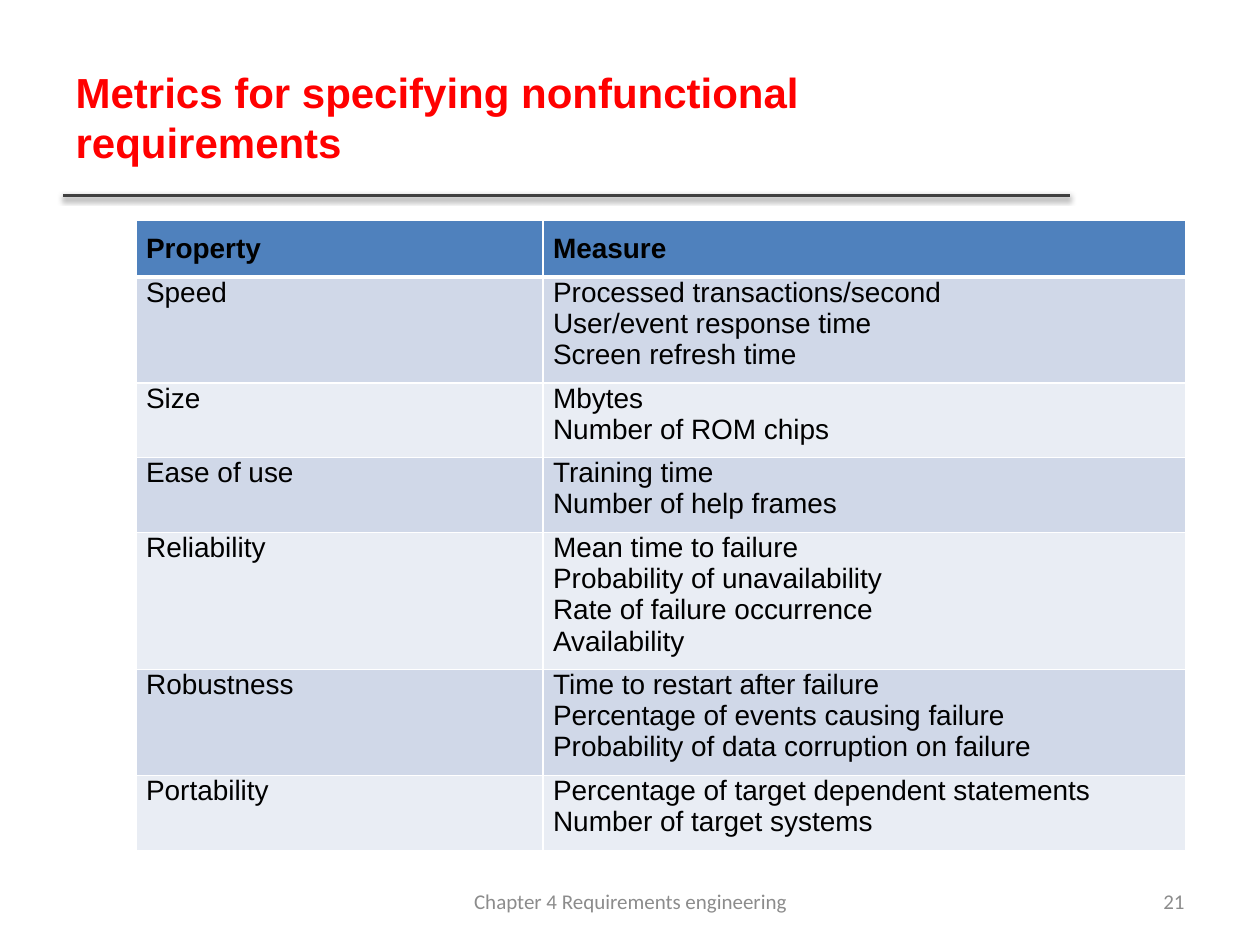
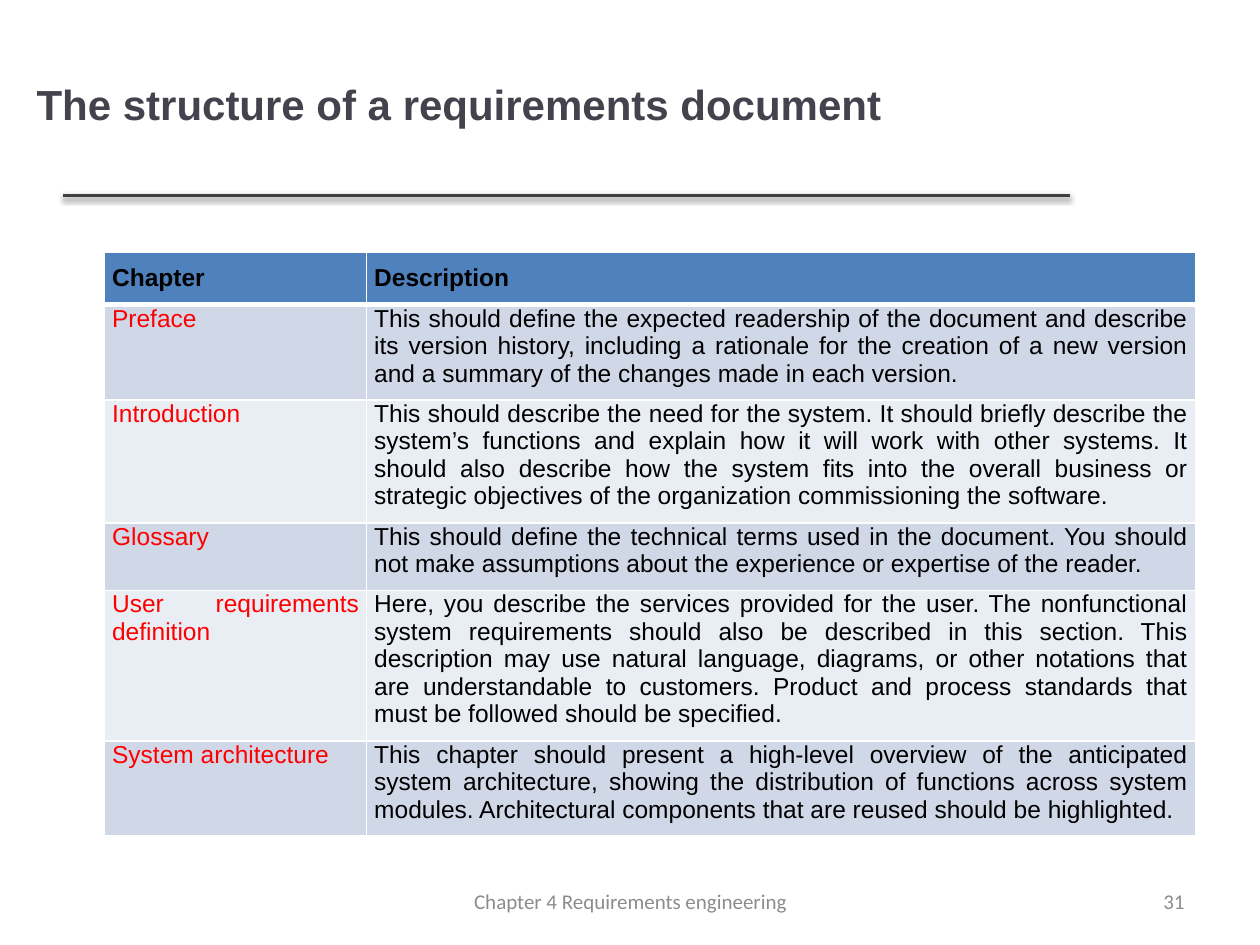
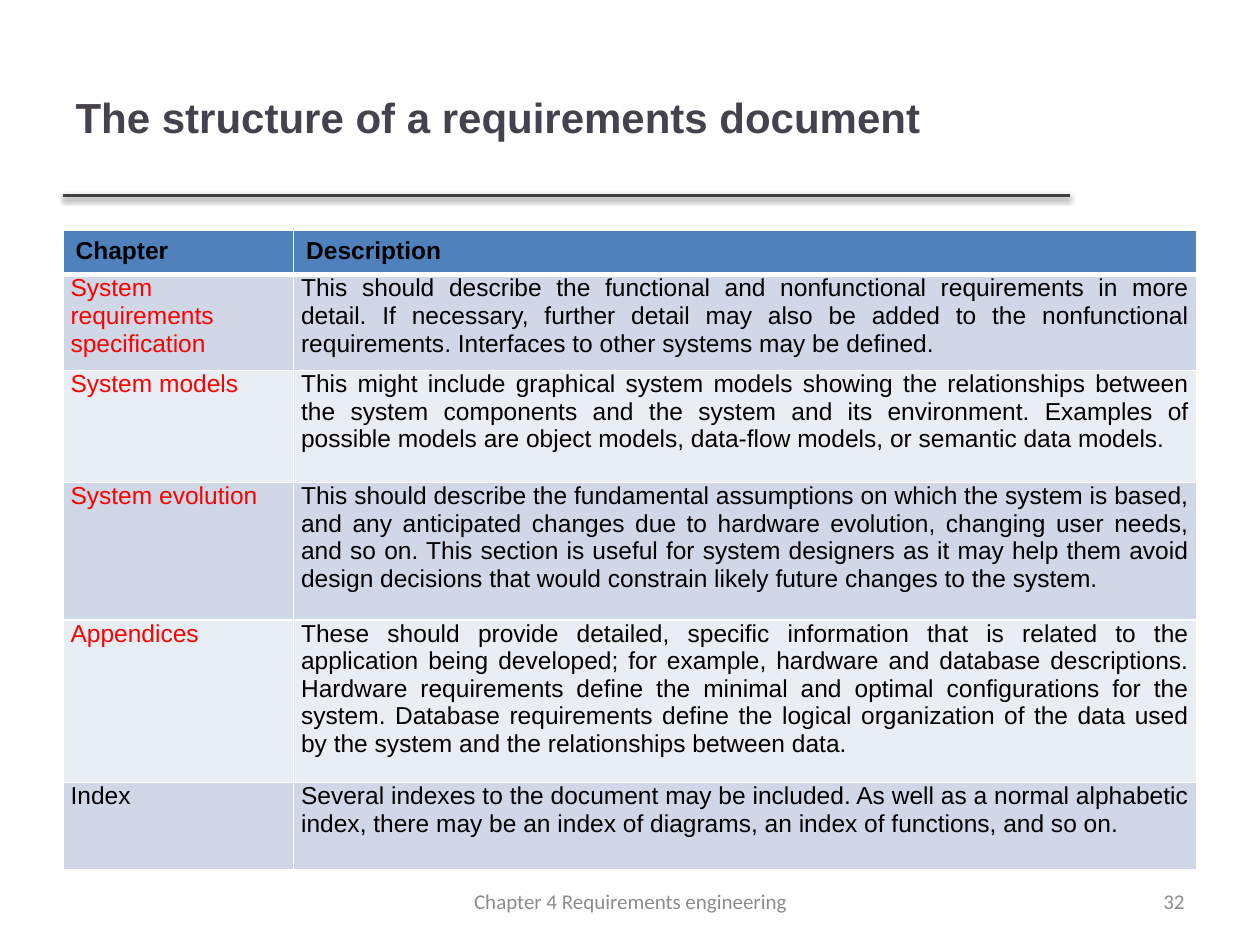
"""Build three slides of requirements tables with shared title, rule and footer."""
from dataclasses import dataclass

from lxml.etree import SubElement as Sub
from pptx import Presentation
from pptx.dml.color import RGBColor
from pptx.enum.shapes import MSO_CONNECTOR as Link
from pptx.enum.text import MSO_ANCHOR as Anchor, MSO_AUTO_SIZE as Fit, PP_ALIGN as Align
from pptx.oxml.ns import qn
from pptx.util import Emu, Pt

SCALE = 9144
RED, BLACK, SLATE = "FF0000", "000000", "46424D"
WHITE, RULE, GREY = "FFFFFF", "404040", "8C8C8C"
HEAD, BANDS = "4F81BD", ("D0D8E8", "E9EDF4")
FOOTER = "Chapter 4 Requirements engineering"


@dataclass(frozen=True)
class Box:
    left: int
    top: int
    width: int
    height: int


@dataclass(frozen=True)
class Inset:
    side: int
    top: int
    foot: int


@dataclass(frozen=True)
class Row:
    name: str
    lines: tuple[str, ...]
    ink: str = RED


@dataclass(frozen=True)
class Grid:
    box: Box
    cols: tuple[int, ...]
    rows: tuple[int, ...]
    size: int
    head: tuple[str, str]
    body: tuple[Row, ...]
    top_pad: Inset
    pad: Inset
    head_align: Align = Align.JUSTIFY


@dataclass(frozen=True)
class Page:
    number: int
    title: str
    grid: Grid
    ink: str = SLATE
    place: Box = Box(50, 30, 798, 125)


def px(count: int) -> Emu:
    return Emu(count * SCALE)


def color(code: str) -> RGBColor:
    return RGBColor.from_string(code)


def put(shape, box: Box) -> None:
    shape.left, shape.top = px(box.left), px(box.top)
    shape.width, shape.height = px(box.width), px(box.height)


def write(frame, lines: tuple[str, ...], size: int, ink: str, align: Align,
          bold: bool = False, face: str = "Arial") -> None:
    for i, line in enumerate(lines):
        para = frame.add_paragraph() if i else frame.paragraphs[0]
        para.alignment = align
        run = para.add_run()
        run.text = line
        font = run.font
        font.name, font.size, font.bold = face, Pt(size), bold
        font.color.rgb = color(ink)


def rule(slide) -> None:
    line = slide.shapes.add_connector(Link.STRAIGHT, px(50), px(155), px(849), px(155))
    line.line.color.rgb = color(RULE)
    line.line.width = Pt(2)
    effects = Sub(line._element.spPr, qn("a:effectLst"))
    shade = Sub(effects, qn("a:outerShdw"), blurRad=str(Pt(3.1)), dist=str(Pt(1.6)),
                dir="5400000", rotWithShape="0")
    tone = Sub(shade, qn("a:srgbClr"), val=BLACK)
    Sub(tone, qn("a:alpha"), val="38000")


def title(slide, page: Page) -> None:
    shape = slide.shapes.title
    put(shape, page.place)
    frame = shape.text_frame
    frame.auto_size, frame.word_wrap = Fit.NONE, True
    frame.vertical_anchor = Anchor.MIDDLE
    write(frame, (page.title,), 24, page.ink, Align.LEFT, bold=True)


def note(slide, text: str, box: Box, align: Align) -> None:
    shape = slide.shapes.add_textbox(0, 0, 0, 0)
    put(shape, box)
    frame = shape.text_frame
    frame.word_wrap, frame.vertical_anchor = True, Anchor.MIDDLE
    write(frame, (text,), 12, GREY, align, face="Calibri")


def edge(cell, row: int) -> None:
    props = cell._tc.get_or_add_tcPr()
    wide = {"lnT": row == 1, "lnB": row == 0}
    for tag in ("lnL", "lnR", "lnT", "lnB"):
        line = Sub(props, qn(f"a:{tag}"), w=str(Pt(3 if wide.get(tag) else 1)))
        Sub(Sub(line, qn("a:solidFill")), qn("a:srgbClr"), val=WHITE)


def style(cell, row: int, fill: str, pad: Inset) -> None:
    edge(cell, row)
    cell.fill.solid()
    cell.fill.fore_color.rgb = color(fill)
    cell.margin_left = cell.margin_right = px(pad.side)
    cell.margin_top, cell.margin_bottom = px(pad.top), px(pad.foot)


def table(slide, grid: Grid) -> None:
    frame = slide.shapes.add_table(len(grid.rows), len(grid.cols), 0, 0, 0, 0)
    tab = frame.table
    for col, width in zip(tab.columns, grid.cols):
        col.width = px(width)
    for row, height in zip(tab.rows, grid.rows):
        row.height = px(height)
    put(frame, grid.box)
    for j, text in enumerate(grid.head):
        cell = tab.cell(0, j)
        style(cell, 0, HEAD, grid.top_pad)
        write(cell.text_frame, (text,), grid.size, BLACK, grid.head_align, bold=True)
    for i, row in enumerate(grid.body, 1):
        pairs = (((row.name,), row.ink), (row.lines, BLACK))
        for j, (lines, ink) in enumerate(pairs):
            cell = tab.cell(i, j)
            style(cell, i, BANDS[(i - 1) % 2], grid.pad)
            write(cell.text_frame, lines, grid.size, ink, Align.JUSTIFY)


METRICS = Grid(
    Box(108, 175, 833, 533), (323, 510), (43, 75, 53, 53, 96, 75, 53), 16,
    ("Property", "Measure"),
    (
        Row("Speed", ("Processed transactions/second", "User/event response time",
                      "Screen refresh time"), BLACK),
        Row("Size", ("Mbytes", "Number of ROM chips"), BLACK),
        Row("Ease of use", ("Training time", "Number of help frames"), BLACK),
        Row("Reliability", ("Mean time to failure", "Probability of unavailability",
                            "Rate of failure occurrence", "Availability"), BLACK),
        Row("Robustness", ("Time to restart after failure",
                           "Percentage of events causing failure",
                           "Probability of data corruption on failure"), BLACK),
        Row("Portability", ("Percentage of target dependent statements",
                            "Number of target systems"), BLACK),
    ),
    Inset(8, 10, 10), Inset(8, 0, 10))

FRONT = Grid(
    Box(83, 200, 867, 490), (208, 658), (41,) * 6, 14,
    ("Chapter", "Description"),
    (
        Row("Preface", (
            "This should define the expected readership of the document and describe its "
            "version history, including a rationale for the creation of a new version and "
            "a summary of the changes made in each version.",)),
        Row("Introduction", (
            "This should describe the need for the system. It should briefly describe the "
            "system’s functions and explain how it will work with other systems. It should "
            "also describe how the system fits into the overall business or strategic "
            "objectives of the organization commissioning the software.",)),
        Row("Glossary", (
            "This should define the technical terms used in the document. You should not "
            "make assumptions about the experience or expertise of the reader.",)),
        Row("User requirements definition", (
            "Here, you describe the services provided for the user. The nonfunctional "
            "system requirements should also be described in this section. This "
            "description may use natural language, diagrams, or other notations that are "
            "understandable to customers. Product and process standards that must be "
            "followed should be specified.",)),
        Row("System architecture", (
            "This chapter should present a high-level overview of the anticipated system "
            "architecture, showing the distribution of functions across system modules. "
            "Architectural components that are reused should be highlighted.",)),
    ),
    Inset(6, 10, 10), Inset(6, 0, 10))

BACK = Grid(
    Box(50, 183, 900, 512), (183, 717), (35, 76, 89, 109, 129, 69), 14,
    ("Chapter", "Description"),
    (
        Row("System requirements specification", (
            "This should describe the functional and nonfunctional requirements in more "
            "detail. If necessary, further detail may also be added to the nonfunctional "
            "requirements. Interfaces to other systems may be defined.",)),
        Row("System models", (
            "This might include graphical system models showing the relationships between "
            "the system components and the system and its environment. Examples of "
            "possible models are object models, data-flow models, or semantic data "
            "models.",)),
        Row("System evolution", (
            "This should describe the fundamental assumptions on which the system is "
            "based, and any anticipated changes due to hardware evolution, changing user "
            "needs, and so on. This section is useful for system designers as it may help "
            "them avoid design decisions that would constrain likely future changes to "
            "the system.",)),
        Row("Appendices", (
            "These should provide detailed, specific information that is related to the "
            "application being developed; for example, hardware and database "
            "descriptions. Hardware requirements define the minimal and optimal "
            "configurations for the system. Database requirements define the logical "
            "organization of the data used by the system and the relationships between "
            "data.",)),
        Row("Index", (
            "Several indexes to the document may be included. As well as a normal "
            "alphabetic index, there may be an index of diagrams, an index of functions, "
            "and so on.",), BLACK),
    ),
    Inset(10, 5, 5), Inset(6, 0, 10), Align.LEFT)

OUTLINE = "The structure of a requirements document"
PAGES = (
    Page(21, "Metrics for specifying nonfunctional requirements", METRICS, RED),
    Page(31, OUTLINE, FRONT, place=Box(19, 23, 806, 119)),
    Page(32, OUTLINE, BACK),
)


def main() -> None:
    deck = Presentation()
    deck.slide_width, deck.slide_height = px(1000), px(750)
    for page in PAGES:
        slide = deck.slides.add_slide(deck.slide_layouts[5])
        rule(slide)
        title(slide, page)
        table(slide, page.grid)
        note(slide, str(page.number), Box(717, 695, 233, 40), Align.RIGHT)
        note(slide, FOOTER, Box(342, 695, 317, 40), Align.CENTER)
    deck.save("out.pptx")


if __name__ == "__main__":
    main()
